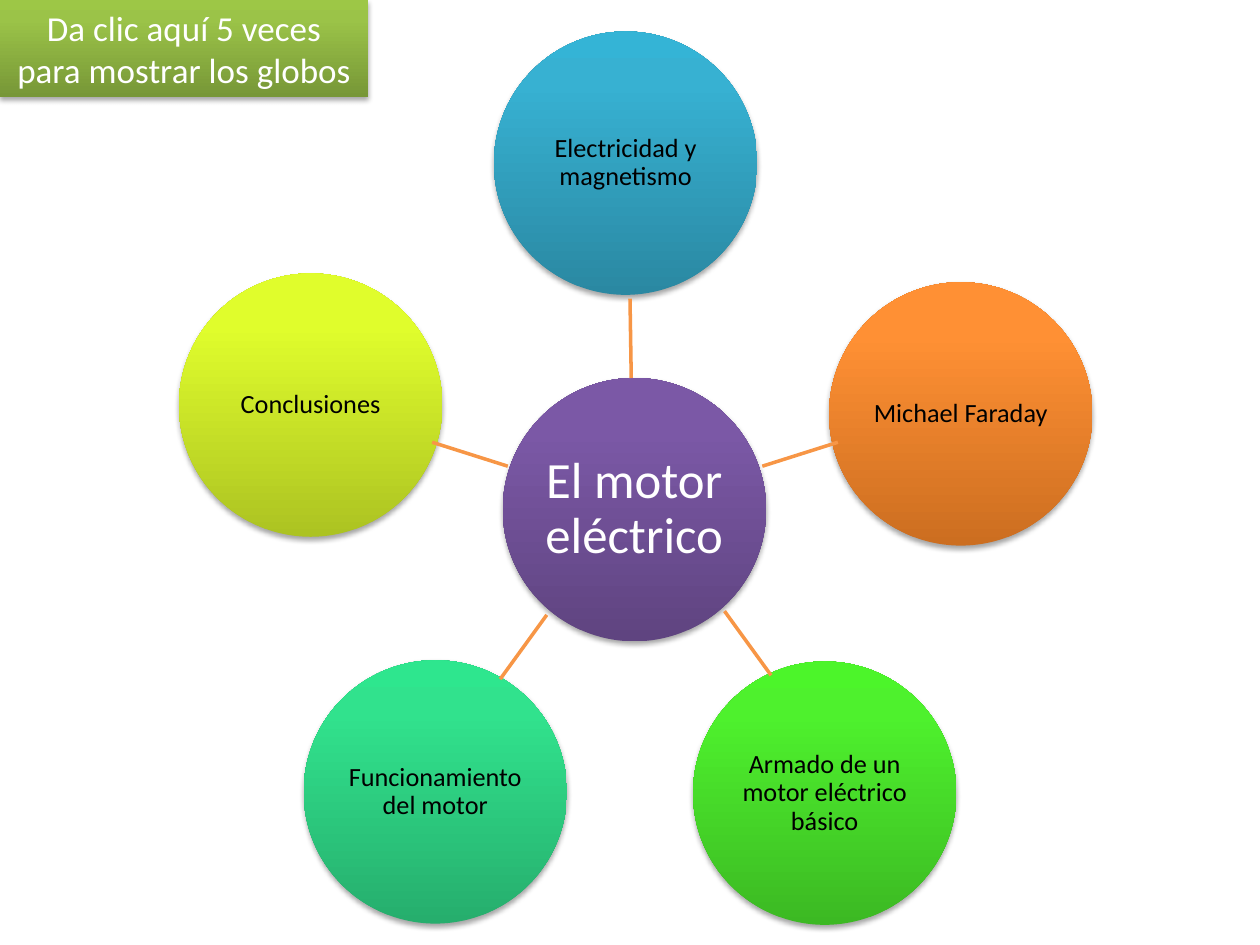
from copy import deepcopy

from lxml import etree
from pptx import Presentation
from pptx.dml.color import RGBColor
from pptx.enum.shapes import MSO_CONNECTOR, MSO_SHAPE
from pptx.enum.text import MSO_ANCHOR, PP_ALIGN
from pptx.oxml.ns import qn
from pptx.util import Inches, Pt

OVAL = MSO_SHAPE.OVAL
RECT = MSO_SHAPE.RECTANGLE
LINE = MSO_CONNECTOR.STRAIGHT
MIDDLE = MSO_ANCHOR.MIDDLE
CENTER = PP_ALIGN.CENTER
SIZE = 2.09

BALLS = [
    ("Michael Faraday", 6.58, 2.24, ("CC6E20", "FF9034", "FF9136")),
    ("Electricidad y magnetismo", 3.92, 0.25, ("2A88A2", "37B1D2", "34B4D6")),
    ("Funcionamiento del motor", 2.41, 5.24, ("26AE6D", "31E28D", "2EE68E")),
    ("Armado de un motor eléctrico básico", 5.5, 5.25, ("3CB923", "4EF12D", "4CF52A")),
    ("Conclusiones", 1.42, 2.17, ("ACC322", "E0FD2C", "E2FF2B")),
]
SPOKES = [
    (5.01, 3, 5, 2.37),
    (4.03, 3.7, 3.43, 3.51),
    (6.05, 3.7, 6.65, 3.51),
    (4.34, 4.88, 3.97, 5.39),
    (5.75, 4.85, 6.12, 5.36),
]


def paint(code):
    return RGBColor.from_string(code)


def write(frame, text, font="Calibri", size=15, color="000000", space=1.0):
    frame.word_wrap = True
    frame.vertical_anchor = MIDDLE
    para = frame.paragraphs[0]
    para.alignment = CENTER
    para.line_spacing = space
    run = para.add_run()
    run.text = text
    run.font.name = font
    run.font.size = Pt(size)
    run.font.color.rgb = paint(color)


class Board:
    accent = "F79646"
    white = "FFFFFF"

    def __init__(self, slide):
        self.slide = slide

    def shade(self, shape, tones):
        fill = shape.fill
        fill.gradient()
        fill.gradient_angle = 90
        stops = shape._element.spPr.find(qn("a:gradFill")).find(qn("a:gsLst"))
        stops.append(deepcopy(stops[0]))
        for stop, spot, tone in zip(fill.gradient_stops, (0, 0.8, 1), tones):
            stop.position = spot
            stop.color.rgb = paint(tone)

    def shadow(self, shape):
        shape.shadow.inherit = False
        effects = shape._element.spPr.find(qn("a:effectLst"))
        outer = etree.SubElement(
            effects, qn("a:outerShdw"), blurRad=str(Pt(3.1)),
            dist=str(Pt(1.8)), dir="5400000", rotWithShape="0")
        color = etree.SubElement(outer, qn("a:srgbClr"), val="000000")
        etree.SubElement(color, qn("a:alpha"), val="35000")

    def block(self, kind, left, top, width, height, tones):
        shape = self.slide.shapes.add_shape(
            kind, Inches(left), Inches(top), Inches(width), Inches(height))
        self.shade(shape, tones)
        shape.line.fill.background()
        self.shadow(shape)
        return shape

    def ball(self, text, left, top, tones, inset=0.01, **style):
        frame = self.block(OVAL, left, top, SIZE, SIZE, tones).text_frame
        frame.margin_left = frame.margin_right = Inches(inset)
        frame.margin_top = frame.margin_bottom = Inches(inset)
        write(frame, text, space=0.9, **style)

    def label(self, text, left, top, width, height, tones):
        shape = self.block(RECT, left, top, width, height, tones)
        write(shape.text_frame, text, size=20, color=self.white)

    def spoke(self, *ends):
        link = self.slide.shapes.add_connector(LINE, *map(Inches, ends))
        link.line.color.rgb = paint(self.accent)
        link.line.width = Pt(2)
        etree.SubElement(link._element.spPr, qn("a:effectLst"))


def main():
    deck = Presentation()
    deck.slide_width = Inches(10)
    deck.slide_height = Inches(7.5)
    board = Board(deck.slides.add_slide(deck.slide_layouts[6]))
    for ball in BALLS:
        board.ball(*ball)
    board.ball("El motor eléctrico", 3.99, 3, ("5F4480", "7B58A6", "7C57A8"),
               inset=0.02, size=29, color=board.white)
    for ends in SPOKES:
        board.spoke(*ends)
    board.label("Da clic aquí 5 veces para mostrar los globos",
                0, 0, 2.92, 0.77, ("779737", "9BC348", "9DC746"))
    deck.save("out.pptx")


if __name__ == "__main__":
    main()
